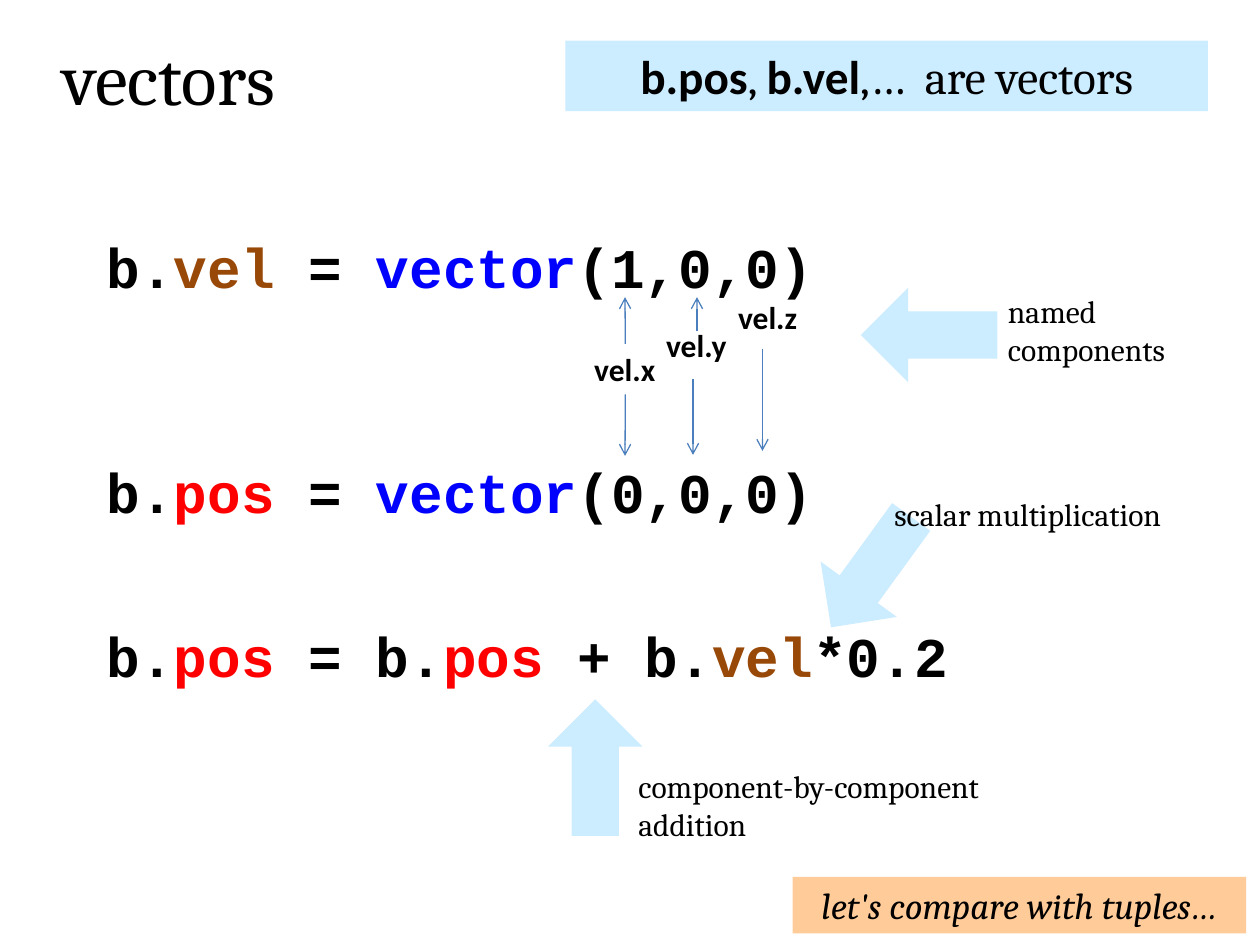
import pptx
import pptx.dml.color
import pptx.enum.shapes
import pptx.enum.text
import pptx.oxml
import pptx.oxml.ns
import pptx.util
from pptx.util import Cm

RGBColor = pptx.dml.color.RGBColor
SHAPE = pptx.enum.shapes.MSO_SHAPE
ALIGN = pptx.enum.text.PP_ALIGN

BLACK = RGBColor(0x00, 0x00, 0x00)
BROWN = RGBColor(0x98, 0x48, 0x07)
RED = RGBColor(0xFF, 0x00, 0x00)
BLUE = RGBColor(0x00, 0x00, 0xFF)
PALE_BLUE = RGBColor(0xCC, 0xEC, 0xFF)
PEACH = RGBColor(0xFF, 0xCC, 0x99)
LINE_BLUE = RGBColor(0x4B, 0x7E, 0xBC)


def format_paragraph(p, size, font="Cambria", bold=False, italic=False, align=ALIGN.LEFT):
    """Set the font and alignment of a whole paragraph."""
    p.alignment = align
    p.font.size = pptx.util.Pt(size)
    p.font.name = font
    p.font.bold = bold
    p.font.italic = italic
    p.font.color.rgb = BLACK


def add_title(s, text):
    """Place and format the title placeholder."""
    sp = s.shapes.title
    sp.left, sp.top, sp.width, sp.height = Cm(1), Cm(0.5), Cm(7.42), Cm(2.06)
    tf = sp.text_frame
    tf.text = text
    tf.auto_size = pptx.enum.text.MSO_AUTO_SIZE.NONE
    format_paragraph(tf.paragraphs[0], 42)


def add_text(s, text, x, y, w, h, size=18, wrap=True, **style):
    """Add a text box with one formatted paragraph and return it."""
    sp = s.shapes.add_textbox(Cm(x), Cm(y), Cm(w), Cm(h))
    tf = sp.text_frame
    tf.word_wrap = wrap
    tf.text = text
    format_paragraph(tf.paragraphs[0], size, **style)
    return sp


def add_code(s, y, w, parts):
    """Add a line of code from (text, colour) parts."""
    sp = add_text(s, "", 1.9, y, w, 1.63, 32, False, font="Courier New", bold=True)
    for text, color in parts:
        r = sp.text_frame.paragraphs[0].add_run()
        r.text = text
        r.font.color.rgb = color


def add_filled(s, kind, x, y, w, h, fill):
    """Add a filled preset shape without outline or shadow."""
    sp = s.shapes.add_shape(kind, Cm(x), Cm(y), Cm(w), Cm(h))
    sp.shadow.inherit = False
    sp.fill.solid()
    sp.fill.fore_color.rgb = fill
    sp.line.fill.background()
    return sp


def add_banner(s, x, y, w, h, fill, size, parts, italic=False):
    """Add a coloured banner from (text, font, bold) parts."""
    sp = add_filled(s, SHAPE.RECTANGLE, x, y, w, h, fill)
    p = sp.text_frame.paragraphs[0]
    format_paragraph(p, size, italic=italic, align=ALIGN.CENTER)
    for text, font, bold in parts:
        r = p.add_run()
        r.text = text
        r.font.name = font
        r.font.bold = bold


def add_block_arrow(s, x, y, rotation):
    """Add a block arrow turned by the given angle."""
    sp = add_filled(s, SHAPE.DOWN_ARROW, x, y, 1.9, 2.75, PALE_BLUE)
    sp.rotation = rotation


def add_arrow(s, x, y1, y2):
    """Add a thin vertical arrow pointing at y2 and return it."""
    line = s.shapes.add_connector(
        pptx.enum.shapes.MSO_CONNECTOR.STRAIGHT, Cm(x), Cm(y1), Cm(x), Cm(y2))
    line.line.color.rgb = LINE_BLUE
    line.line.width = pptx.util.Pt(0.75)
    tail = pptx.oxml.parse_xml(
        f'<a:tailEnd {pptx.oxml.ns.nsdecls("a")} type="arrow"/>')
    line.line._get_or_add_ln().append(tail)
    line._element.spPr.append(
        pptx.oxml.parse_xml(f'<a:effectLst {pptx.oxml.ns.nsdecls("a")}/>'))
    return line


def add_components(s):
    """Add the component labels and the arrows to their values."""
    labels = [
        add_text(s, f"vel.{axis}", 11.73 + 1.45 * i, y, 1.75, 1.02,
                 wrap=False, font="Calibri", bold=True)
        for i, (axis, y) in enumerate(zip("xyz", (6.93, 6.45, 5.89)))
    ]
    add_arrow(s, 12.6, 6.93, 5.99).begin_connect(labels[0], 0)
    add_arrow(s, 12.6, 7.95, 9.19).begin_connect(labels[0], 2)
    for x, y1, y2 in ((14.05, 6.68, 5.99), (13.97, 7.65, 9.17), (15.37, 7.04, 9.09)):
        add_arrow(s, x, y1, y2)


def main():
    """Build the slide about vectors."""
    prs = pptx.Presentation()
    prs.slide_width, prs.slide_height = Cm(25.4), Cm(19.05)
    s = prs.slides.add_slide(prs.slide_layouts[5])
    add_title(s, "vectors")
    add_banner(s, 11.4, 0.82, 12.95, 1.42, PALE_BLUE, 27, [
        ("b.pos", "Calibri", True), (", ", "Cambria", False),
        ("b.vel", "Calibri", True), (",…  are vectors", "Cambria", False)])

    for x, y, rotation in ((11.05, 14.1, 180), (17.78, 5.38, 90), (16.61, 10.16, 36)):
        add_block_arrow(s, x, y, rotation)
    add_text(s, "component-by-component addition", 12.62, 15.34, 9.47, 1.8)
    add_text(s, "named components", 20.07, 5.77, 4.52, 1.8)
    add_text(s, "scalar multiplication", 17.78, 9.86, 6.12, 1.02, wrap=False)

    add_code(s, 4.57, 14.91, [("b.", BLACK), ("vel", BROWN), (" = ", BLACK),
                              ("vector", BLUE), ("(1,0,0)", BLACK)])
    add_code(s, 9.09, 14.91, [("b.", BLACK), ("pos ", RED), ("= ", BLACK),
                              ("vector", BLUE), ("(0,0,0)", BLACK)])
    add_code(s, 12.4, 17.8, [("b.", BLACK), ("pos", RED), (" = b.", BLACK), ("pos", RED),
                             (" + b.", BLACK), ("vel", BROWN), ("*0.2", BLACK)])
    add_components(s)
    add_banner(s, 15.98, 17.68, 9.14, 1.14, PEACH, 21,
               [("let's compare with tuples…", "Cambria", False)], italic=True)
    prs.save("out.pptx")


if __name__ == "__main__":
    main()
